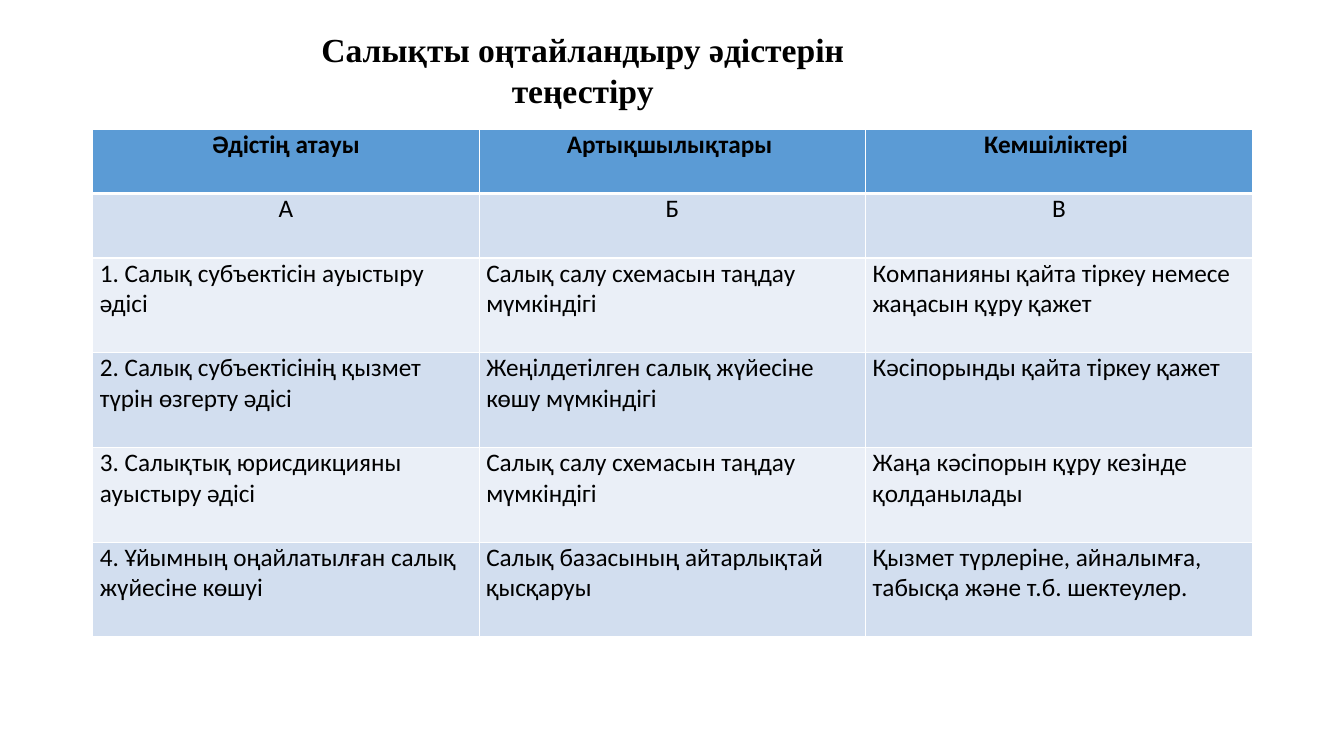
from pptx import Presentation
from pptx.dml.color import RGBColor
from pptx.enum.text import MSO_AUTO_SIZE, PP_ALIGN
from pptx.oxml.ns import qn
from pptx.util import Inches, Pt
from lxml.etree import SubElement

TITLE = "Салықты оңтайландыру әдістерін теңестіру"
METHODS = [
    ("Әдістің атауы", "Артықшылықтары ", "Кемшіліктері "),
    ("А", "Б", "В"),
    ("1. Салық субъектісін ауыстыру әдісі",
     "Салық салу схемасын таңдау мүмкіндігі",
     "Компанияны қайта тіркеу немесе жаңасын құру қажет"),
    ("2. Салық субъектісінің қызмет түрін өзгерту әдісі",
     "Жеңілдетілген салық жүйесіне көшу мүмкіндігі",
     "Кәсіпорынды қайта тіркеу қажет"),
    ("3. Салықтық юрисдикцияны ауыстыру әдісі",
     "Салық салу схемасын таңдау мүмкіндігі",
     "Жаңа кәсіпорын құру кезінде қолданылады"),
    ("4. Ұйымның оңайлатылған салық жүйесіне көшуі",
     "Салық базасының айтарлықтай қысқаруы",
     "Қызмет түрлеріне, айналымға, табысқа және т.б. шектеулер."),
]
ROW_HEIGHTS = [0.64] * 2 + [0.94] * 4
HEADER_FILL = "5B9BD5"
BAND_FILLS = ("EAEFF7", "D2DEEF")
BORDER_COLOR = "FFFFFF"


def color(value):
    return RGBColor.from_string(value)


def write(frame, text, size, font, bold, align):
    paragraph = frame.paragraphs[0]
    paragraph.alignment = align
    run = paragraph.add_run()
    run.text = text
    run.font.size = Pt(size)
    run.font.name = font
    run.font.bold = bold
    run.font.color.rgb = color("000000")


def add_title(slide):
    title = slide.shapes.add_textbox(
        Inches(2.48), Inches(0.24), Inches(6.6), Inches(0.91))
    frame = title.text_frame
    frame.word_wrap = True
    frame.auto_size = MSO_AUTO_SIZE.SHAPE_TO_FIT_TEXT
    write(frame, TITLE, 24, "Times New Roman", True, PP_ALIGN.CENTER)


def set_borders(cell, widths):
    properties = cell._tc.get_or_add_tcPr()
    for side, width in widths.items():
        border = SubElement(properties, qn(f"a:ln{side}"), w=str(Pt(width)))
        fill = SubElement(border, qn("a:solidFill"))
        SubElement(fill, qn("a:srgbClr"), val=BORDER_COLOR)


def fill_cell(cell, text, row):
    header = row == 0
    cell.margin_left = cell.margin_right = Inches(0.07)
    cell.margin_top = cell.margin_bottom = 0
    set_borders(cell, {"L": 1, "R": 1, "T": 3 if row == 1 else 1,
                       "B": 3 if header else 1})
    cell.fill.solid()
    cell.fill.fore_color.rgb = color(HEADER_FILL if header else BAND_FILLS[row % 2])
    align = PP_ALIGN.CENTER if row < 2 else PP_ALIGN.LEFT
    write(cell.text_frame, text, 18, "Calibri", header, align)


def add_methods_table(slide):
    table = slide.shapes.add_table(
        len(METHODS), len(METHODS[0]), Inches(0.92), Inches(1.28),
        Inches(11.5), Inches(sum(ROW_HEIGHTS))).table
    for row, (texts, height) in enumerate(zip(METHODS, ROW_HEIGHTS)):
        table.rows[row].height = Inches(height)
        for column, text in enumerate(texts):
            fill_cell(table.cell(row, column), text, row)


def main():
    presentation = Presentation()
    presentation.slide_width = Inches(13.33)
    presentation.slide_height = Inches(7.5)
    slide = presentation.slides.add_slide(presentation.slide_layouts[6])
    add_methods_table(slide)
    add_title(slide)
    presentation.save("out.pptx")


if __name__ == "__main__":
    main()
